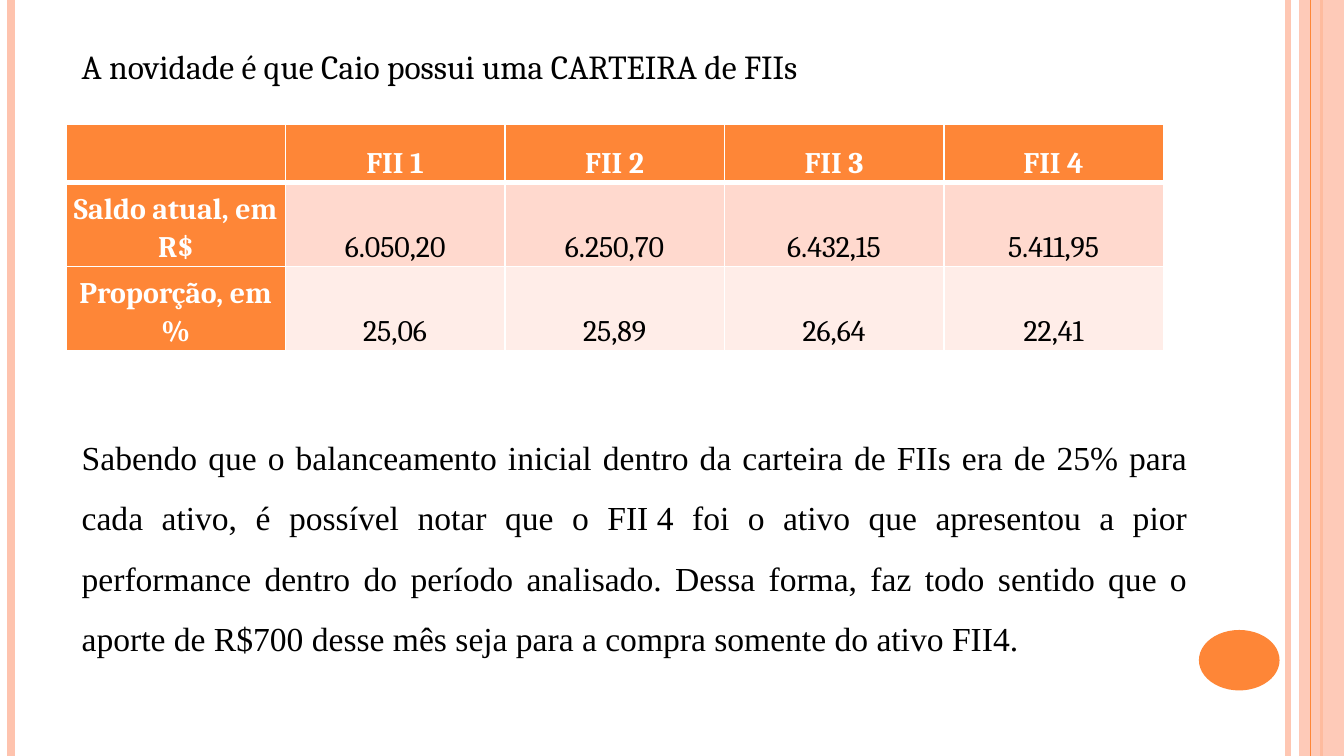
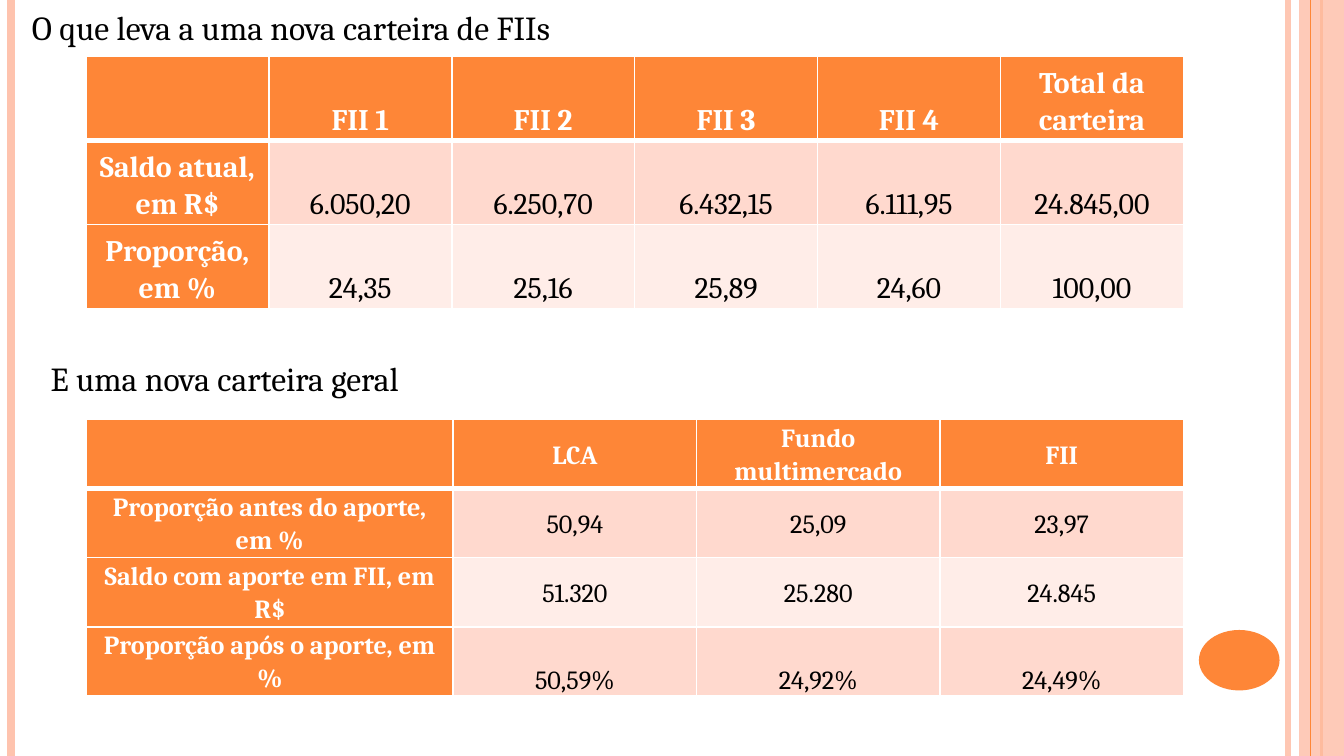
from lxml.etree import SubElement
from pptx import Presentation
from pptx.dml.color import RGBColor
from pptx.enum.shapes import MSO_CONNECTOR, MSO_SHAPE
from pptx.enum.text import MSO_ANCHOR, MSO_AUTO_SIZE, PP_ALIGN
from pptx.oxml.ns import qn
from pptx.util import Pt

COLORS = {
    "accent": "FE8637",
    "band": "FEC3AE",
    "row_dark": "FFD9CE",
    "row_light": "FFEDE8",
    "white": "FFFFFF",
    "black": "000000",
}
WIDTH, HEIGHT = 720, 405
TABLE_WIDTH = 588


def rgb(name):
    return RGBColor.from_string(COLORS[name])


def set_alpha(fill_parent, percent):
    color = fill_parent.find(".//" + qn("a:srgbClr"))
    SubElement(color, qn("a:alpha"), val=str(percent * 1000))


def write(frame, text, size=18, font="Cambria", color="black", bold=False,
          align=PP_ALIGN.LEFT, spacing=None, before=None):
    paragraph = frame.paragraphs[0]
    paragraph.alignment = align
    paragraph.line_spacing = spacing
    if before is not None:
        paragraph.space_before = Pt(before)
    run = paragraph.add_run()
    run.text = text
    run.font.size = Pt(size)
    run.font.name = font
    run.font.bold = bold
    run.font.color.rgb = rgb(color)


def add_text(slide, text, left, top, width, height, **text_format):
    box = slide.shapes.add_textbox(Pt(left), Pt(top), Pt(width), Pt(height))
    box.text_frame.word_wrap = True
    box.text_frame.auto_size = MSO_AUTO_SIZE.SHAPE_TO_FIT_TEXT
    write(box.text_frame, text, **text_format)


def add_stripe(slide, x, color, weight, alpha=None):
    stripe = slide.shapes.add_connector(
        MSO_CONNECTOR.STRAIGHT, Pt(x), 0, Pt(x), Pt(HEIGHT))
    stripe.line.color.rgb = rgb(color)
    stripe.line.width = Pt(weight)
    properties = stripe._element.spPr
    if alpha:
        set_alpha(properties, alpha)
    SubElement(properties, qn("a:effectLst"))


def add_solid(slide, kind, left, top, width, height, color, alpha=None):
    solid = slide.shapes.add_shape(kind, Pt(left), Pt(top), Pt(width), Pt(height))
    solid.shadow.inherit = False
    solid.fill.solid()
    solid.fill.fore_color.rgb = rgb(color)
    solid.line.fill.background()
    if alpha:
        set_alpha(solid._element.spPr, alpha)


def add_frame(slide):
    """Side stripes and the oval shared by every slide."""
    add_stripe(slide, 690, "band", 3, alpha=93)
    add_stripe(slide, 6, "band", 4.5)
    add_stripe(slide, 708, "accent", 1.5)
    add_solid(slide, MSO_SHAPE.RECTANGLE, 696, 0, 24, HEIGHT, "band", alpha=87)
    add_stripe(slide, 702, "accent", 0.75)
    # Oval for the page number
    add_solid(slide, MSO_SHAPE.OVAL, 642.3, 337.5, 43.2, 32.4, "accent")


def set_borders(cell, top, bottom):
    properties = cell._tc.get_or_add_tcPr()
    for side, weight in (("L", 1), ("R", 1), ("T", top), ("B", bottom)):
        line = SubElement(properties, qn("a:ln" + side), w=str(Pt(weight)))
        fill = SubElement(line, qn("a:solidFill"))
        SubElement(fill, qn("a:srgbClr"), val=COLORS["white"])


def add_grid(slide, rows, left, top, columns, heights, size, margins,
             anchor=MSO_ANCHOR.BOTTOM, last_anchor=MSO_ANCHOR.BOTTOM):
    """Table with an accent header row and column; margins are (side, top/bottom)."""
    table = slide.shapes.add_table(
        len(rows), len(columns), Pt(left), Pt(top),
        Pt(sum(columns)), Pt(sum(heights))).table
    for column, width in zip(table.columns, columns):
        column.width = Pt(width)
    for r, values in enumerate(rows):
        table.rows[r].height = Pt(heights[r])
        for c, value in enumerate(values):
            cell = table.cell(r, c)
            heading = r == 0 or c == 0
            body_fill = "row_dark" if r % 2 else "row_light"
            set_borders(cell, top=3 if r == 1 else 1, bottom=3 if r == 0 else 1)
            cell.fill.solid()
            cell.fill.fore_color.rgb = rgb("accent" if heading else body_fill)
            cell.margin_left = cell.margin_right = Pt(margins[0])
            cell.margin_top = cell.margin_bottom = Pt(margins[1])
            last_value = r == len(rows) - 1 and c > 0
            cell.vertical_anchor = last_anchor if last_value else anchor
            if value:
                write(cell.text_frame, value, size=size, bold=heading,
                      color="white" if heading else "black",
                      align=PP_ALIGN.CENTER, spacing=1.1)


def add_fii_grid(slide, rows, left, top, header_height):
    count = len(rows[0])
    add_grid(slide, rows, left, top, [TABLE_WIDTH / count] * count,
             [header_height, 45, 45], size=16, margins=(2.4, 1.2))


def build_current_portfolio(slide):
    add_frame(slide)
    add_text(slide, "A novidade é que Caio possui uma CARTEIRA de FIIs",
             36.7, 21, 607, 29)
    add_fii_grid(slide, [
        ["", "FII 1", "FII 2", "FII 3", "FII 4"],
        ["Saldo atual, em R$", "6.050,20", "6.250,70", "6.432,15", "5.411,95"],
        ["Proporção, em %", "25,06", "25,89", "26,64", "22,41"],
    ], 35.3, 66.6, header_height=31.3)
    add_text(slide,
             "Sabendo que o balanceamento inicial dentro da carteira de FIIs era "
             "de 25% para cada ativo, é possível notar que o FII\u00a04 foi o ativo "
             "que apresentou a pior performance dentro do período analisado. "
             "Dessa forma, faz todo sentido que o aporte de R$700 desse mês seja "
             "para a compra somente do ativo FII4.",
             36.7, 219.6, 607, 135.4, font="Times New Roman",
             align=PP_ALIGN.JUSTIFY, spacing=1.5, before=2.9)


def build_new_portfolio(slide):
    add_frame(slide)
    # FII portfolio
    add_text(slide, "O que leva a uma nova carteira de FIIs", 10, 0, 623.5, 29)
    add_fii_grid(slide, [
        ["", "FII 1", "FII 2", "FII 3", "FII 4", "Total da carteira"],
        ["Saldo atual, em R$", "6.050,20", "6.250,70", "6.432,15", "6.111,95",
         "24.845,00"],
        ["Proporção, em %", "24,35", "25,16", "25,89", "24,60", "100,00"],
    ], 46, 30.3, header_height=45)
    # Overall portfolio
    add_text(slide, "E uma nova carteira geral", 20, 188, 623.5, 29)
    add_grid(slide, [
        ["", "LCA", "Fundo multimercado", "FII"],
        ["Proporção antes do aporte, em %", "50,94", "25,09", "23,97"],
        ["Saldo com aporte em FII, em R$", "51.320", "25.280", "24.845"],
        ["Proporção após o aporte, em %", "50,59%", "24,92%", "24,49%"],
    ], 46.3, 224.8, [196.5] + [130.4] * 3, [36.8] * 4, size=14,
        margins=(3.6, 0), anchor=MSO_ANCHOR.MIDDLE)


def main():
    deck = Presentation()
    deck.slide_width, deck.slide_height = Pt(WIDTH), Pt(HEIGHT)
    blank = deck.slide_layouts[6]
    for build in (build_current_portfolio, build_new_portfolio):
        build(deck.slides.add_slide(blank))
    deck.save("out.pptx")


if __name__ == "__main__":
    main()
